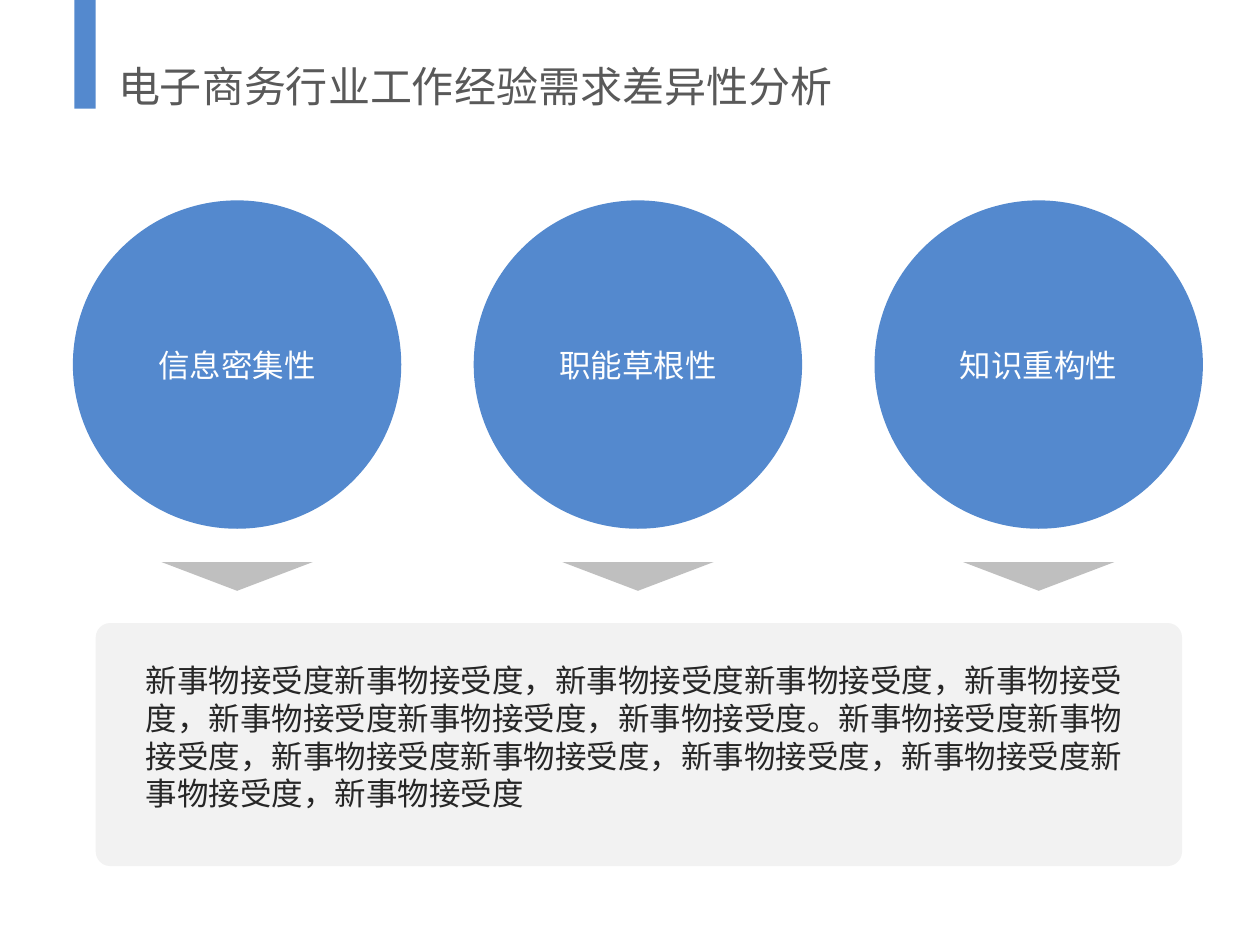
import lxml.etree
import pptx
import pptx.dml.color
import pptx.enum.shapes
import pptx.enum.text
import pptx.oxml.ns
import pptx.util
from pptx.util import Cm

SHAPES = pptx.enum.shapes.MSO_SHAPE
ALIGN = pptx.enum.text.PP_ALIGN
BLUE = "5489CE"
TITLE_FONT = "Noto Sans CJK SC"
BODY_FONT = "Noto Sans CJK JP"
TITLE = "电子商务行业工作经验需求差异性分析"
TRAITS = ["信息密集性", "职能草根性", "知识重构性"]
SUMMARY = (
    "新事物接受度新事物接受度，新事物接受度新事物接受度，新事物接受度，"
    "新事物接受度新事物接受度，新事物接受度。新事物接受度新事物接受度，"
    "新事物接受度新事物接受度，新事物接受度，新事物接受度新事物接受度，新事物接受度"
)


def color(value):
    return pptx.dml.color.RGBColor.from_string(value)


def write(frame, text, size, font_name, text_color, align=ALIGN.LEFT):
    frame.word_wrap = True
    para = frame.paragraphs[0]
    para.text = text
    para.alignment = align
    font = para.font
    font.size = pptx.util.Pt(size)
    font.name = font_name
    font.color.rgb = color(text_color)
    # Chinese characters take the East Asian typeface, not the Latin one.
    qn = pptx.oxml.ns.qn
    latin = para._p.pPr.find(qn("a:defRPr")).find(qn("a:latin"))
    east_asian = lxml.etree.Element(qn("a:ea"), typeface=font_name)
    latin.addnext(east_asian)


def add_shape(page, kind, left, top, width, height, fill):
    shape = page.shapes.add_shape(kind, Cm(left), Cm(top), Cm(width), Cm(height))
    shape.shadow.inherit = False
    shape.fill.solid()
    shape.fill.fore_color.rgb = color(fill)
    shape.line.fill.background()
    return shape


def add_text(page, left, top, width, height, text, size, font_name, text_color):
    box = page.shapes.add_textbox(Cm(left), Cm(top), Cm(width), Cm(height))
    write(box.text_frame, text, size, font_name, text_color)
    box.text_frame.auto_size = pptx.enum.text.MSO_AUTO_SIZE.SHAPE_TO_FIT_TEXT


def add_trait(page, center, text):
    """Add a labelled circle with an arrow pointing down below it."""
    diameter, arrow_width = 6.62, 3.05
    circle = add_shape(page, SHAPES.OVAL, center - diameter / 2, 4.04,
                       diameter, diameter, BLUE)
    circle.text_frame.vertical_anchor = pptx.enum.text.MSO_ANCHOR.MIDDLE
    write(circle.text_frame, text, 18, BODY_FONT, "FFFFFF", ALIGN.CENTER)
    arrow = add_shape(page, SHAPES.ISOSCELES_TRIANGLE, center - arrow_width / 2,
                      11.33, arrow_width, 0.58, "BFBFBF")
    arrow.rotation = 180


def main():
    deck = pptx.Presentation()
    deck.slide_width, deck.slide_height = Cm(25.4), Cm(19.05)
    page = deck.slides.add_slide(deck.slide_layouts[6])

    add_shape(page, SHAPES.RECTANGLE, 1.5, 0, 0.43, 2.19, BLUE)
    add_text(page, 2.13, 1.1, 18.57, 1.28, TITLE, 24, TITLE_FONT, "595959")

    for index, trait in enumerate(TRAITS):
        add_trait(page, 4.78 + index * 8.08, trait)

    panel = add_shape(page, SHAPES.ROUNDED_RECTANGLE, 1.93, 12.56, 21.9, 4.9, "F2F2F2")
    panel.adjustments[0] = 0.06
    add_text(page, 2.69, 13.2, 20.32, 3.33, SUMMARY, 18, BODY_FONT, "262626")

    deck.save("out.pptx")


if __name__ == "__main__":
    main()
